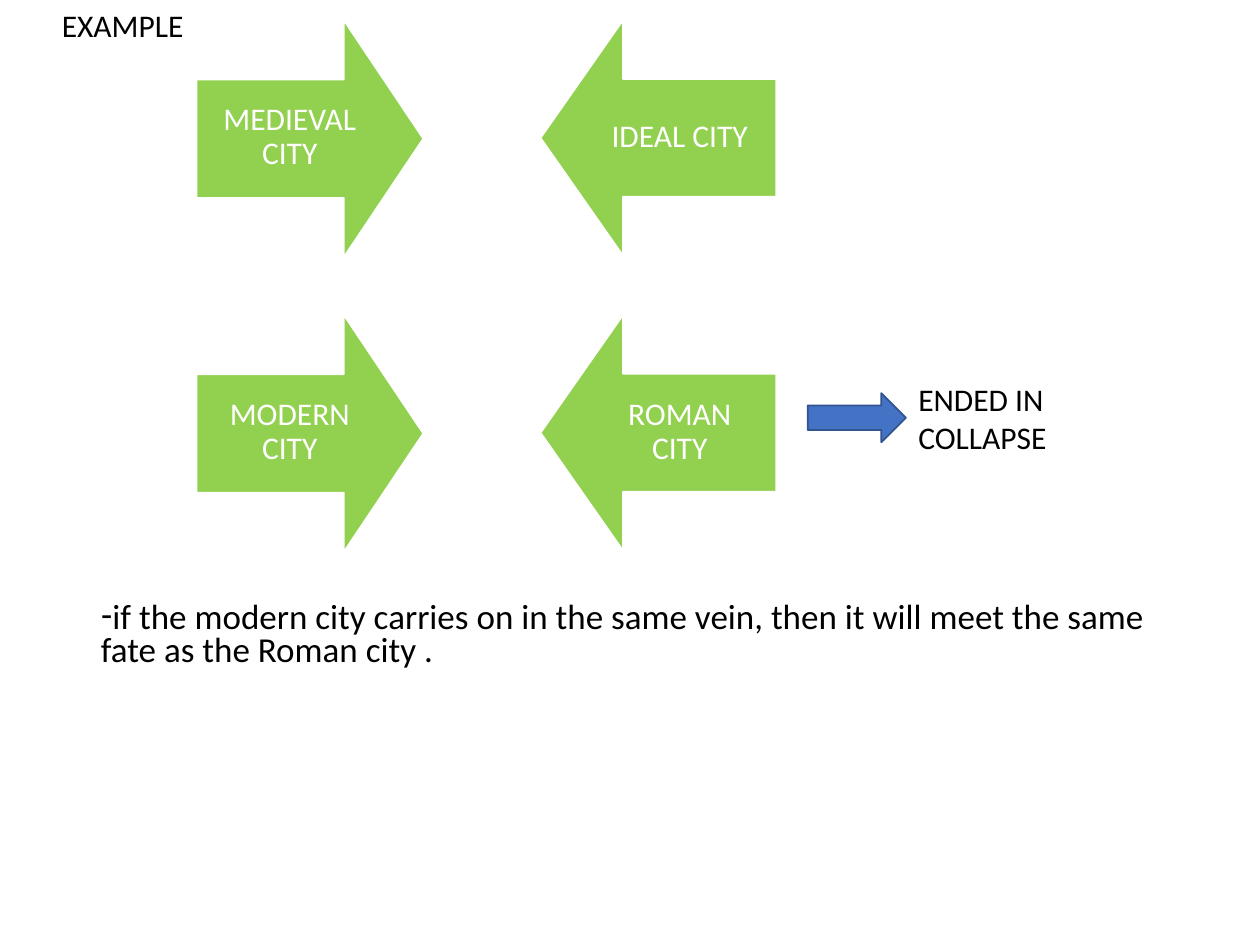
from dataclasses import dataclass

from pptx import Presentation
from pptx.dml.color import RGBColor as Rgb
from pptx.enum.shapes import MSO_SHAPE as Kind
from pptx.enum.text import MSO_ANCHOR as Anchor, MSO_AUTO_SIZE as Fit, PP_ALIGN as Align
from pptx.oxml.xmlchemy import OxmlElement as Node
from pptx.util import Inches, Pt


@dataclass(frozen=True)
class Theme:
    font: str = "Calibri"
    green: str = "92D050"
    blue: str = "4472C4"
    navy: str = "325491"
    white: str = "FFFFFF"
    black: str = "000000"
    label: int = 18
    body: int = 20


@dataclass(frozen=True)
class Box:
    left: float
    top: float
    width: float
    height: float

    def down(self, gap: float) -> "Box":
        return Box(self.left, self.top + gap, self.width, self.height)

    def place(self) -> tuple:
        return tuple(map(Inches, (self.left, self.top, self.width, self.height)))


@dataclass(frozen=True)
class Side:
    arrow: Box
    label: Box
    turn: int


THEME = Theme()
LEFT = Side(Box(1.52, 0.2, 1.88, 1.8), Box(1.56, 0.62, 1.48, 0.94), 270)
RIGHT = Side(Box(4.29, 0.16, 1.87, 1.87), Box(4.62, 0.62, 1.55, 0.94), 90)
ROWS = [("MEDIEVAL CITY", "IDEAL CITY"), ("MODERN CITY", "ROMAN CITY")]
STEP = 2.34


def write(shape, text: str, size: int, color: str, align=Align.LEFT, anchor=Anchor.TOP):
    frame = shape.text_frame
    frame.text = text
    frame.word_wrap = True
    frame.vertical_anchor = anchor
    para = frame.paragraphs[0]
    para.alignment = align
    font = para.runs[0].font
    font.name, font.size = THEME.font, Pt(size)
    font.color.rgb = Rgb.from_string(color)
    return frame


def fill_hold(hold, box: Box, text: str, size: int):
    hold.left, hold.top, hold.width, hold.height = box.place()
    frame = write(hold, text, size, THEME.black)
    frame.auto_size = Fit.SHAPE_TO_FIT_TEXT
    return frame


def add_arrow(slide, kind: Kind, box: Box, fill: str, line: str):
    arrow = slide.shapes.add_shape(kind, *box.place())
    arrow.shadow.inherit = False
    arrow.fill.solid()
    arrow.fill.fore_color.rgb = Rgb.from_string(fill)
    arrow.line.color.rgb = Rgb.from_string(line)
    arrow.line.width = Pt(1)
    return arrow


def add_city(slide, side: Side, drop: float, text: str) -> None:
    arrow = add_arrow(slide, Kind.DOWN_ARROW, side.arrow.down(drop), THEME.green, THEME.white)
    arrow.rotation = side.turn
    arrow.adjustments[0] = 0.5
    arrow.adjustments[1] = 0.35
    label = slide.shapes.add_textbox(*side.label.down(drop).place())
    frame = write(label, text, THEME.label, THEME.white, Align.CENTER, Anchor.MIDDLE)
    frame.margin_left = frame.margin_right = Inches(0.14)
    frame.margin_top = frame.margin_bottom = Inches(0.14)
    frame.paragraphs[0].line_spacing = 0.9


def add_note(hold) -> None:
    text = "if the modern city carries on in the same vein, then it will meet the same fate as the Roman city ."
    frame = fill_hold(hold, Box(0.7, 4.45, 8.83, 0.89), text, THEME.body)
    frame.margin_top = Inches(0.33)
    para = frame.paragraphs[0]
    para.line_spacing = 0.8
    para.space_before = Pt(0)
    props = para._p.get_or_add_pPr()
    props.set("marL", "0")
    props.set("indent", "0")
    mark = Node("a:buChar")
    mark.set("char", "-")
    props.append(mark)


def main() -> None:
    deck = Presentation()
    deck.slide_width, deck.slide_height = Inches(10), Inches(7.5)
    slide = deck.slides.add_slide(deck.slide_layouts[1])
    add_note(slide.placeholders[1])
    for row, names in enumerate(ROWS):
        for side, name in zip((LEFT, RIGHT), names):
            add_city(slide, side, row * STEP, name)
    fill_hold(slide.shapes.title, Box(0.39, 0, 1.33, 0.4), "EXAMPLE", THEME.label)
    add_arrow(slide, Kind.RIGHT_ARROW, Box(6.41, 3.12, 0.78, 0.39), THEME.blue, THEME.navy)
    end = slide.shapes.add_textbox(*Box(7.19, 2.97, 1.6, 0.71).place())
    write(end, "ENDED IN COLLAPSE", THEME.label, THEME.black)
    deck.save("out.pptx")


if __name__ == "__main__":
    main()
